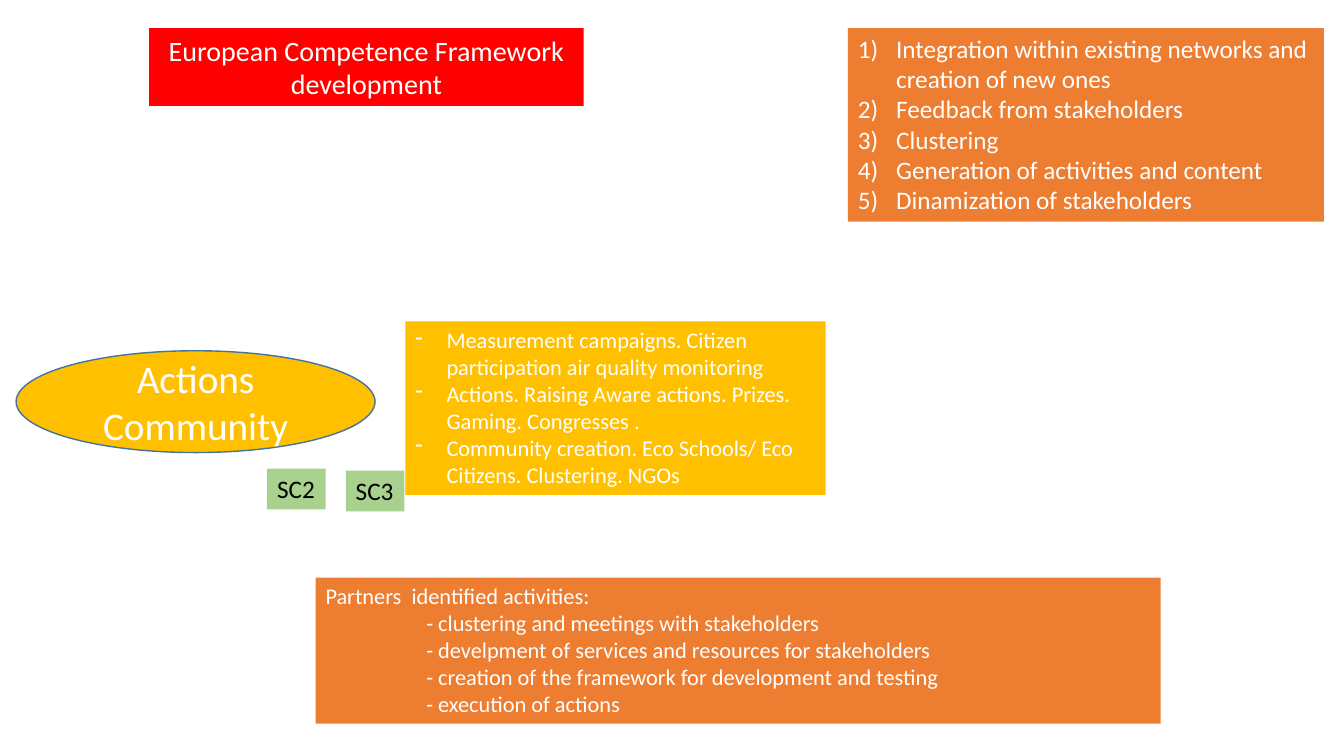
from dataclasses import dataclass

from lxml import etree
from pptx import Presentation
from pptx.dml.color import RGBColor
from pptx.enum.shapes import MSO_SHAPE
from pptx.enum.text import MSO_ANCHOR, MSO_AUTO_SIZE, PP_ALIGN
from pptx.oxml.ns import qn
from pptx.util import Inches, Pt

RECT, OVAL = MSO_SHAPE.RECTANGLE, MSO_SHAPE.OVAL
TOP, MIDDLE = MSO_ANCHOR.TOP, MSO_ANCHOR.MIDDLE
LEFT, CENTER = PP_ALIGN.LEFT, PP_ALIGN.CENTER
GROW, FIXED = MSO_AUTO_SIZE.SHAPE_TO_FIT_TEXT, MSO_AUTO_SIZE.NONE


@dataclass(frozen=True)
class Theme:
    font: str = "Calibri"
    red: str = "FF0000"
    gold: str = "FFC000"
    green: str = "A9D18E"
    orange: str = "ED7D31"
    edge: str = "43739E"
    white: str = "FFFFFF"
    black: str = "000000"
    small: int = 16
    body: int = 18
    head: int = 20
    large: int = 28


class Board:
    """Draws on one slide; places are percentages of its width and height."""

    def __init__(self, deck, theme):
        self.wide, self.high = deck.slide_width, deck.slide_height
        self.slide = deck.slides.add_slide(deck.slide_layouts[6])
        self.theme = theme

    def shape(self, kind, place, fill):
        left, top, width, height = place
        shape = self.slide.shapes.add_shape(
            kind,
            int(self.wide * left / 100), int(self.high * top / 100),
            int(self.wide * width / 100), int(self.high * height / 100))
        shape.shadow.inherit = False
        shape.fill.solid()
        shape.fill.fore_color.rgb = RGBColor.from_string(fill)
        shape.line.fill.background()
        return shape

    def text(self, frame, lines, size, color, align):
        for i, line in enumerate(lines):
            para = frame.paragraphs[0] if i == 0 else frame.add_paragraph()
            para.text = line
            para.alignment = align
            font = para.font
            font.name, font.size = self.theme.font, Pt(size)
            font.color.rgb = RGBColor.from_string(color)

    def box(self, place, fill, lines, size, color=Theme.white, align=LEFT,
            wrap=True):
        shape = self.shape(RECT, place, fill)
        frame = shape.text_frame
        frame.word_wrap, frame.auto_size = wrap, GROW
        frame.vertical_anchor = TOP
        self.text(frame, lines, size, color, align)
        return frame.paragraphs

    def oval(self, place, fill, lines, size):
        shape = self.shape(OVAL, place, fill)
        shape.line.color.rgb = RGBColor.from_string(self.theme.edge)
        shape.line.width = Pt(1)
        frame = shape.text_frame
        frame.word_wrap, frame.auto_size = True, FIXED
        frame.vertical_anchor = MIDDLE
        self.text(frame, lines, size, self.theme.white, CENTER)

    def indent(self, paras, left, hang=0):
        for para in paras:
            props = para._p.get_or_add_pPr()
            props.set("marL", str(Inches(left)))
            props.set("indent", str(-Inches(hang)))

    def bullet(self, paras, gap, tag, **marks):
        """Hang each paragraph by gap inches behind a bullet element."""
        self.indent(paras, gap, gap)
        for para in paras:
            mark = etree.Element(qn(tag), **marks)
            para._p.pPr.insert(0, mark)


def main():
    deck = Presentation()
    deck.slide_width, deck.slide_height = Inches(13.33), Inches(7.5)
    look = Theme()
    board = Board(deck, look)

    board.box((11.1, 3.73, 32.33, 10.27), look.red,
              ["European Competence Framework development"],
              look.head, align=CENTER)

    tasks = board.box(
        (30.16, 42.53, 31.28, 22.93), look.gold,
        ["Measurement campaigns. Citizen participation air quality monitoring",
         "Actions. Raising Aware actions. Prizes. Gaming. Congresses .",
         "Community creation. Eco Schools/ Eco Citizens. Clustering. NGOs"],
        look.small)
    for task in tasks:
        task.level = 1
    board.bullet(tasks, 0.31, "a:buChar", char="-")

    board.oval((1.2, 46.4, 26.71, 13.47), look.gold,
               ["Actions", "Community"], look.large)

    for name, left, top in (("SC2", 19.88, 62), ("SC3", 25.73, 62.27)):
        board.box((left, top, 4.35, 5.38), look.green, [name],
                  look.body, look.black, wrap=False)

    goals = board.box(
        (63.09, 3.73, 35.41, 25.6), look.orange,
        ["Integration within existing networks and creation of new ones",
         "Feedback from stakeholders",
         "Clustering",
         "Generation of activities and content",
         "Dinamization of stakeholders"],
        look.body)
    board.bullet(goals, 0.38, "a:buAutoNum", type="arabicParenR")

    plans = board.box(
        (23.48, 76.4, 62.87, 19.33), look.orange,
        ["Partners  identified activities:",
         "- clustering and meetings with stakeholders",
         "- develpment of services and resources for stakeholders",
         "- creation of the framework for development and testing",
         "- execution of actions"],
        look.small)
    board.indent(plans[1:], 1)

    deck.save("out.pptx")


if __name__ == "__main__":
    main()
